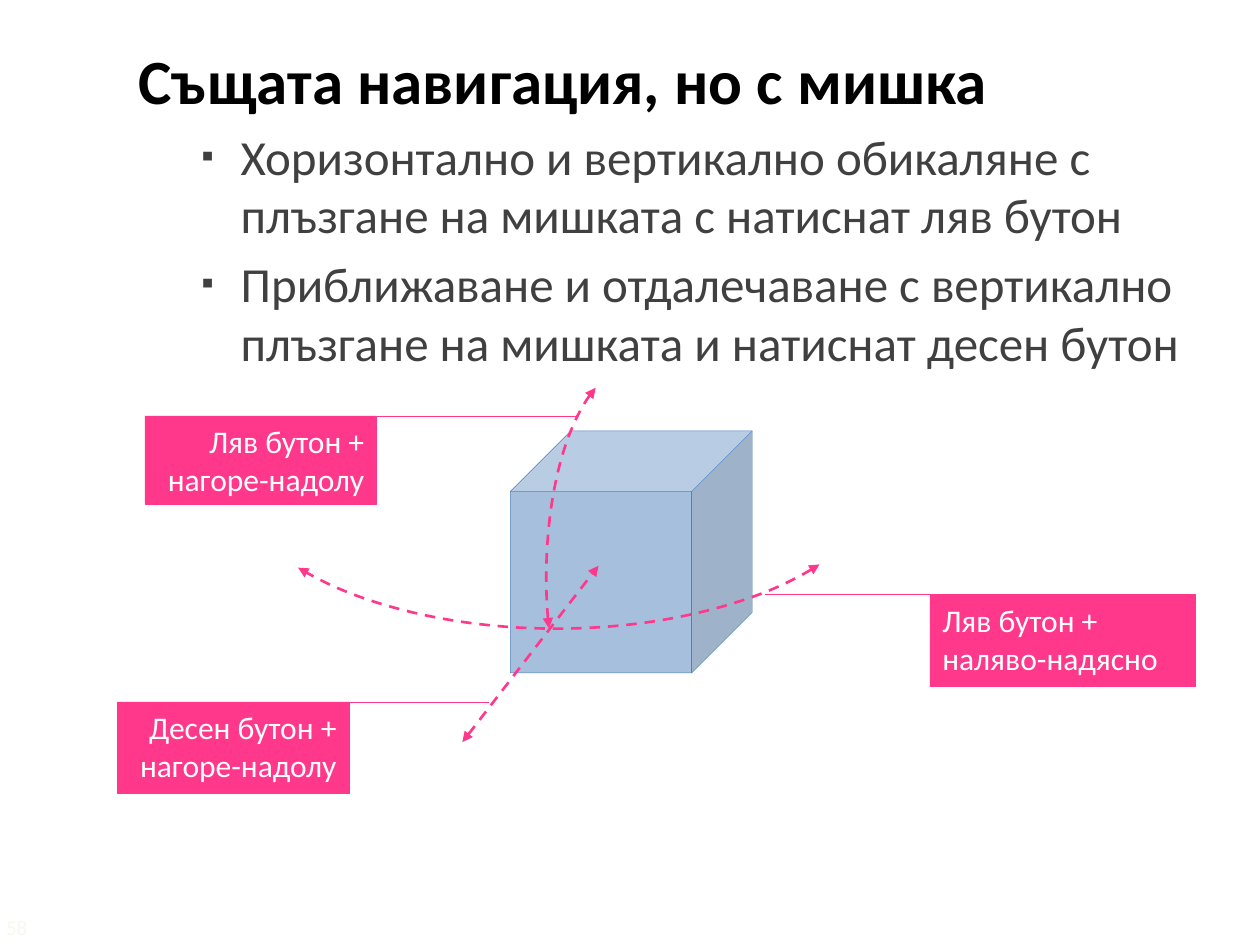
from lxml.etree import SubElement
from pptx import Presentation
from pptx.dml.color import RGBColor
from pptx.enum.dml import MSO_LINE
from pptx.enum.shapes import MSO_CONNECTOR, MSO_SHAPE
from pptx.enum.text import MSO_ANCHOR, MSO_AUTO_SIZE, PP_ALIGN
from pptx.oxml.ns import qn
from pptx.util import Inches, Pt

PINK = RGBColor(0xFF, 0x38, 0x8C)
BLUE = RGBColor(0x4F, 0x81, 0xBD)
BLACK = RGBColor(0, 0, 0)
GREY = RGBColor(0x40, 0x40, 0x40)
WHITE = RGBColor(0xFF, 0xFF, 0xFF)
PALE = RGBColor(0xF8, 0xF8, 0xF0)
FONT = "Calibri"


def place(sp, x, y, w, h):
    sp.left, sp.top, sp.width, sp.height = (Inches(v) for v in (x, y, w, h))


def add_run(p, text, size, color, bold=False):
    r = p.add_run()
    r.text = text
    r.font.name, r.font.size, r.font.bold = FONT, Pt(size), bold
    r.font.color.rgb = color


def set_title(sp, text):
    place(sp, 1, 0.28, 8.92, 0.7)
    tf = sp.text_frame
    tf.auto_size = MSO_AUTO_SIZE.NONE
    tf.vertical_anchor = MSO_ANCHOR.TOP
    p = tf.paragraphs[0]
    p.alignment = PP_ALIGN.LEFT
    add_run(p, text, 36, BLACK, bold=True)


def set_bullet(p):
    pPr = p._p.get_or_add_pPr()
    pPr.set("marL", str(Inches(0.81)))
    pPr.set("indent", str(Inches(-0.31)))
    color = SubElement(pPr, qn("a:buClr"))
    SubElement(color, qn("a:srgbClr"), val=str(GREY))
    SubElement(pPr, qn("a:buSzPct"), val="70000")
    SubElement(pPr, qn("a:buFont"), typeface=FONT)
    SubElement(pPr, qn("a:buChar"), char="▪")


def set_list(sp, items):
    place(sp, 1, 0.95, 8.92, 2.2)
    tf = sp.text_frame
    tf.auto_size = MSO_AUTO_SIZE.NONE
    for i, text in enumerate(items):
        p = tf.add_paragraph() if i else tf.paragraphs[0]
        p.level = 1
        p.space_before = Pt(5.6 if i else 0)
        set_bullet(p)
        add_run(p, text, 28, GREY)


def set_line(sp, color, width=0.25):
    sp.line.color.rgb = color
    sp.line.width = Pt(width)


def set_arrow(sp):
    """Dashed pink line with a triangle at both ends."""
    set_line(sp, PINK, 1.5)
    sp.line.dash_style = MSO_LINE.DASH
    ln = sp.line._get_or_add_ln()
    for end in ("a:headEnd", "a:tailEnd"):
        SubElement(ln, qn(end), type="triangle")


def add_line(shapes, x1, y1, x2, y2):
    line = shapes.add_connector(MSO_CONNECTOR.STRAIGHT, Inches(x1), Inches(y1),
                                Inches(x2), Inches(y2))
    SubElement(line._element.spPr, qn("a:effectLst"))
    return line


def add_shape(shapes, kind, x, y, w, h):
    sp = shapes.add_shape(kind, Inches(x), Inches(y), Inches(w), Inches(h))
    sp.shadow.inherit = False
    return sp


def add_cube(shapes):
    sp = add_shape(shapes, MSO_SHAPE.CUBE, 4.05, 3.42, 1.92, 1.92)
    sp.fill.solid()
    sp.fill.fore_color.rgb = BLUE
    color = sp._element.spPr.find(qn("a:solidFill"))[0]
    SubElement(color, qn("a:alpha"), val="50000")
    set_line(sp, BLUE)


def add_arc(shapes, x, y, w, h, start, end, rotation=0):
    sp = add_shape(shapes, MSO_SHAPE.ARC, x, y, w, h)
    sp.adjustments[0], sp.adjustments[1] = start, end
    sp.rotation = rotation
    sp.fill.background()
    set_arrow(sp)


def add_callout(shapes, text, x, y, w, h, line_from, line_to, align):
    """Label box with a leader line along its top edge."""
    group = shapes.add_group_shape()
    sp = add_shape(group.shapes, MSO_SHAPE.RECTANGLE, x, y, w, h)
    sp.fill.solid()
    sp.fill.fore_color.rgb = PINK
    set_line(sp, PINK)
    tf = sp.text_frame
    tf.word_wrap = True
    tf.vertical_anchor = MSO_ANCHOR.TOP
    p = tf.paragraphs[0]
    p.alignment = align
    add_run(p, text, 18, WHITE)
    set_line(add_line(group.shapes, line_from, y, line_to, y), PINK)


def add_page_number(shapes, text):
    tf = shapes.add_textbox(Inches(-0.05), Inches(7.21), Inches(0.5),
                            Inches(0.29)).text_frame
    add_run(tf.paragraphs[0], text, 12, PALE)


def main():
    prs = Presentation()
    prs.slide_width, prs.slide_height = Inches(10), Inches(7.5)
    s = prs.slides.add_slide(prs.slide_layouts[1])
    shapes = s.shapes

    # Title and list
    set_title(shapes.title, "Същата навигация, но с мишка")
    set_list(s.placeholders[1], [
        "Хоризонтално и вертикално обикаляне с плъзгане на мишката с натиснат ляв бутон",
        "Приближаване и отдалечаване с вертикално плъзгане на мишката и натиснат десен бутон",
    ])

    # Cube, with the orbit and zoom directions around it
    add_callout(shapes, "Ляв бутон + наляво-надясно", 7.38, 4.72, 2.11, 0.73,
                9.48, 6.07, PP_ALIGN.LEFT)
    add_cube(shapes)
    add_arc(shapes, 1.76, 2.33, 5.31, 2.66, 12.86, 94.54)
    add_arc(shapes, 3.36, 3.89, 3.33, 1.38, 35.19, 101.27, rotation=90)
    add_callout(shapes, "Ляв бутон + нагоре-надолу", 1.15, 3.3, 1.84, 0.7,
                1.15, 4.58, PP_ALIGN.RIGHT)
    set_arrow(add_line(shapes, 3.67, 5.89, 4.75, 4.49))
    add_callout(shapes, "Десен бутон + нагоре-надолу", 0.93, 5.57, 1.84, 0.73,
                0.93, 3.88, PP_ALIGN.RIGHT)

    # Page number
    add_page_number(shapes, "58")

    prs.save("out.pptx")


if __name__ == "__main__":
    main()
